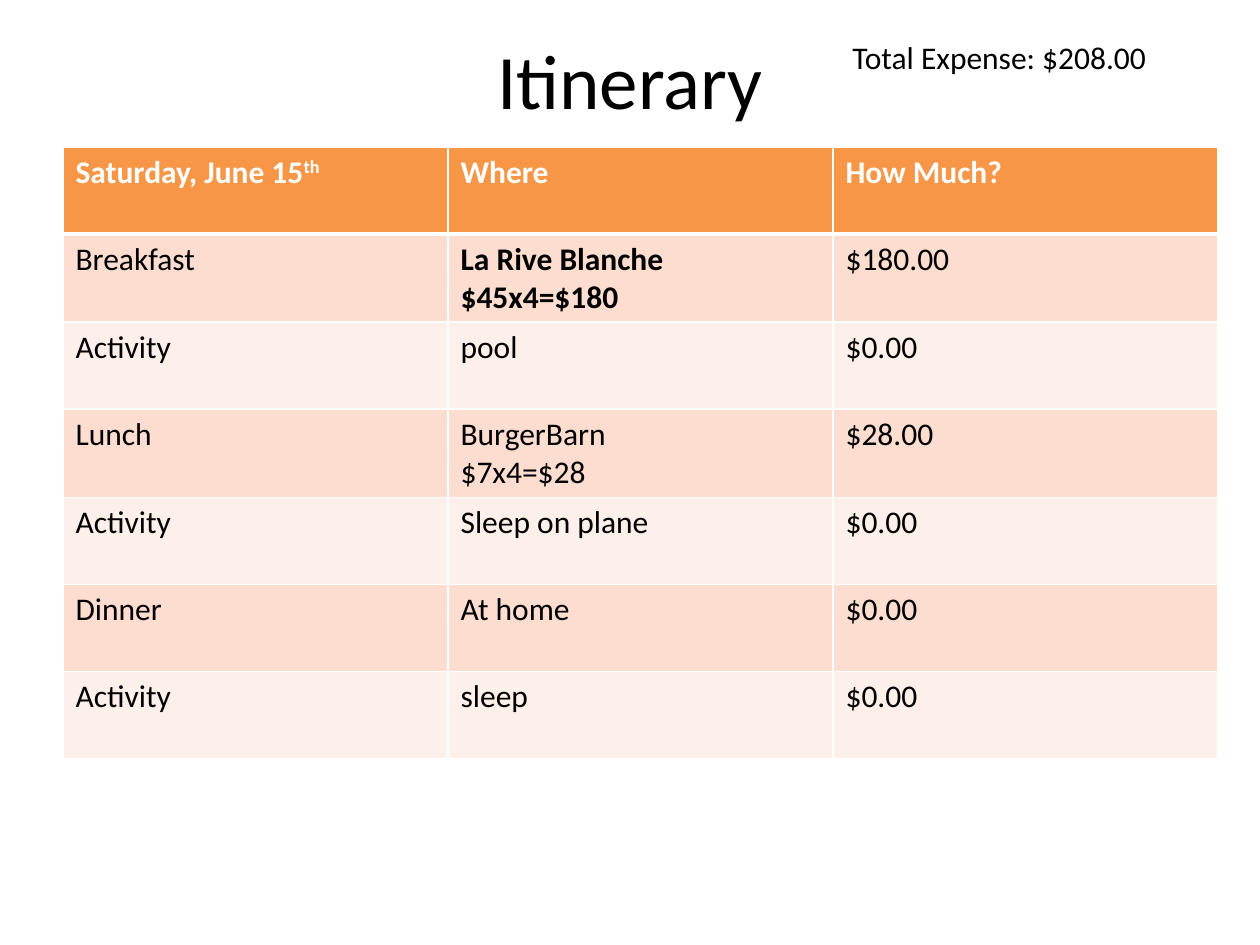
from lxml import etree
from pptx import Presentation
from pptx.dml.color import RGBColor
from pptx.enum.text import MSO_ANCHOR, PP_ALIGN
from pptx.oxml.ns import qn
from pptx.util import Pt

CENTER = PP_ALIGN.CENTER
MIDDLE = MSO_ANCHOR.MIDDLE
TITLE_ONLY = 5
EMU_PER_PX = 914400 / 126
COLORS = {
    "text": "000000",
    "white": "FFFFFF",
    "header": "F79646",
    "odd_row": "FCDDCF",
    "even_row": "FDEFE9",
}
HEADERS = ["Saturday, June 15", "Where", "How Much?"]
MEALS = [
    ["Breakfast", "La Rive Blanche\n$45x4=$180", "$180.00"],
    ["Activity", "pool", "$0.00"],
    ["Lunch", "BurgerBarn\n$7x4=$28", "$28.00"],
    ["Activity", "Sleep on plane", "$0.00"],
    ["Dinner", "At home", "$0.00"],
    ["Activity", "sleep", "$0.00"],
]


def px(*lengths):
    return [round(length * EMU_PER_PX) for length in lengths]


class SlideBuilder:
    font = "Calibri"
    body_size = 18
    title_size = 44

    def __init__(self, presentation):
        layout = presentation.slide_layouts[TITLE_ONLY]
        self.slide = presentation.slides.add_slide(layout)

    def format_text(self, text_frame, size, color="text", bold=False):
        for paragraph in text_frame.paragraphs:
            for run in paragraph.runs:
                run.font.name = self.font
                run.font.size = Pt(size)
                run.font.bold = bold
                run.font.color.rgb = RGBColor.from_string(COLORS[color])

    def title(self, text, *box):
        shape = self.slide.shapes.title
        shape.left, shape.top, shape.width, shape.height = px(*box)
        text_frame = shape.text_frame
        text_frame.text = text
        text_frame.vertical_anchor = MIDDLE
        text_frame.paragraphs[0].alignment = CENTER
        self.format_text(text_frame, self.title_size)

    def text_box(self, text, *box):
        text_frame = self.slide.shapes.add_textbox(*px(*box)).text_frame
        text_frame.word_wrap = True
        text_frame.text = text
        self.format_text(text_frame, self.body_size)

    def cell_borders(self, cell, bottom_width):
        properties = cell._tc.get_or_add_tcPr()
        widths = {"a:lnL": 1, "a:lnR": 1, "a:lnT": 1, "a:lnB": bottom_width}
        for tag, width in widths.items():
            line = etree.SubElement(properties, qn(tag), w=str(Pt(width)))
            fill = etree.SubElement(line, qn("a:solidFill"))
            etree.SubElement(fill, qn("a:srgbClr"), val=COLORS["white"])

    def cell(self, cell, text, fill, color="text", bold=False, bottom_width=1):
        cell.text_frame.text = text
        self.format_text(cell.text_frame, self.body_size, color, bold)
        self.cell_borders(cell, bottom_width)
        cell.fill.solid()
        cell.fill.fore_color.rgb = RGBColor.from_string(COLORS[fill])

    def table(self, headers, rows, *box):
        size = len(rows) + 1, len(headers)
        table = self.slide.shapes.add_table(*size, *px(*box)).table
        for column, text in enumerate(headers):
            self.cell(table.cell(0, column), text, "header", "white", True, 3)
        for row, texts in enumerate(rows, 1):
            fill = "odd_row" if row % 2 else "even_row"
            for column, text in enumerate(texts):
                bold = (row, column) == (1, 1)
                self.cell(table.cell(row, column), text, fill, bold=bold)
        return table

    def superscript(self, cell, text):
        run = cell.text_frame.paragraphs[0].add_run()
        run.text = text
        self.format_text(cell.text_frame, self.body_size, "white", True)
        run._r.get_or_add_rPr().set("baseline", "30000")


def main():
    presentation = Presentation()
    presentation.slide_width, presentation.slide_height = px(1260, 945)
    builder = SlideBuilder(presentation)
    builder.title("Itinerary", 63, 0, 1134, 158)
    builder.text_box("Total Expense: $208.00", 840, 32, 388, 50)
    table = builder.table(HEADERS, MEALS, 63, 147, 1155, 609)
    builder.superscript(table.cell(0, 0), "th")
    presentation.save("out.pptx")


if __name__ == "__main__":
    main()
